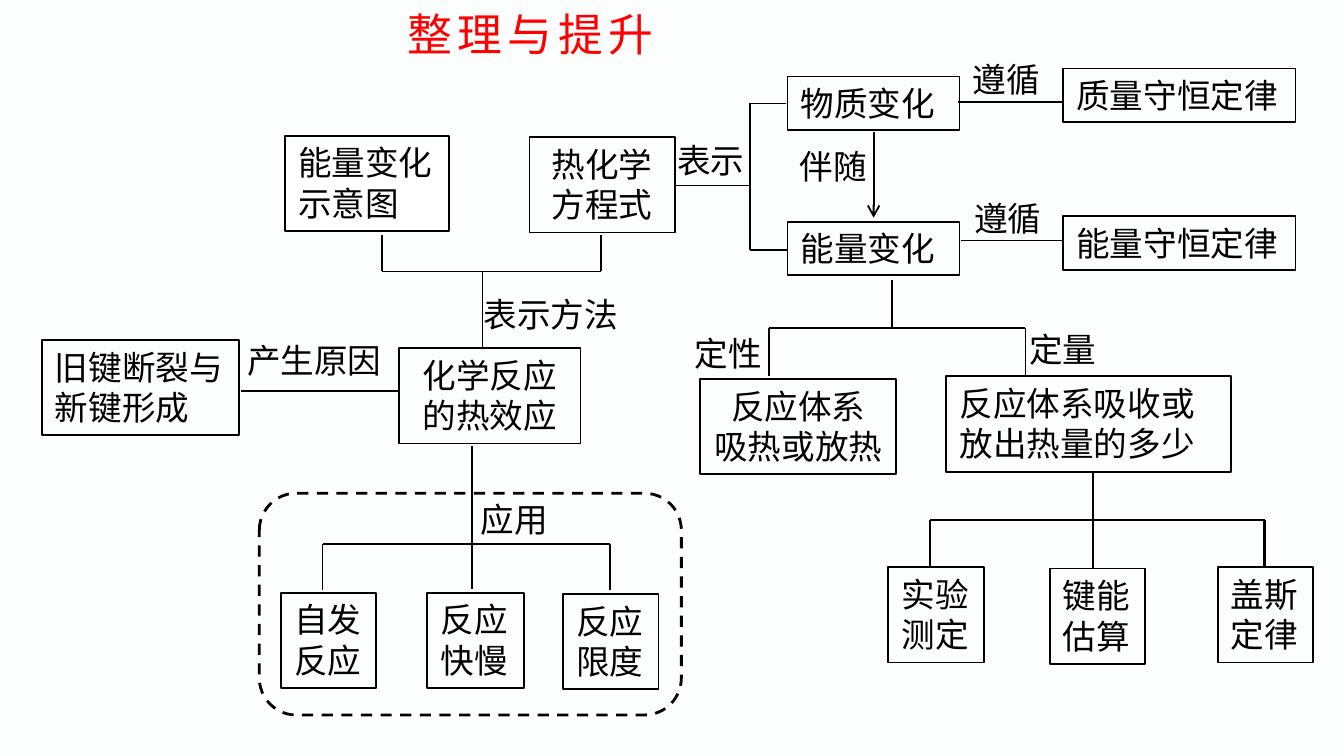
from dataclasses import dataclass
from itertools import pairwise

from lxml import etree
from pptx import Presentation
from pptx.dml.color import RGBColor
from pptx.enum.dml import MSO_LINE
from pptx.enum.shapes import MSO_CONNECTOR, MSO_SHAPE
from pptx.enum.text import MSO_ANCHOR, MSO_AUTO_SIZE, PP_ALIGN
from pptx.oxml.ns import qn
from pptx.util import Inches, Pt

RECTANGLE = MSO_SHAPE.RECTANGLE
ROUNDED = MSO_SHAPE.ROUNDED_RECTANGLE
STRAIGHT = MSO_CONNECTOR.STRAIGHT
DASH = MSO_LINE.DASH
TOP = MSO_ANCHOR.TOP
NO_AUTOFIT = MSO_AUTO_SIZE.NONE
LEFT, CENTER = PP_ALIGN.LEFT, PP_ALIGN.CENTER

COLORS = {"background": "FCFDFD", "ink": "000000", "title": "FF0000", "paper": "FFFFFF"}
FONT = "Noto Sans CJK SC"
SLIDE_WIDTH = 10
SLIDE_HEIGHT = SLIDE_WIDTH * 9 / 16
ONE_LINE, TWO_LINES = 0.4, 0.71


@dataclass
class Box:
    text: str
    left: float
    top: float
    width: float
    height: float = TWO_LINES
    align: int = LEFT
    fill: str | None = None


@dataclass
class Label:
    text: str
    left: float
    top: float
    width: float = 0.88


@dataclass
class Fork:
    stem: float
    stem_start: float
    stem_end: float
    bar: float
    first: float
    last: float
    branch_end: float
    last_width: float = 1


@dataclass
class Route:
    points: tuple[tuple[float, float], ...]
    width: float = 1
    arrow: bool = False


BOXES = [
    Box("化学反应\n的热效应", 2.97, 2.59, 1.35, align=CENTER),
    Box("热化学方程式", 3.94, 1.02, 1.08, align=CENTER),
    Box("能量变化示意图", 2.12, 1.01, 1.22, fill="paper"),
    Box("旧键断裂与\n新键形成", 0.31, 2.53, 1.47),
    Box("质量守恒定律", 7.91, 0.51, 1.73, ONE_LINE),
    Box("能量守恒定律", 7.91, 1.61, 1.73, ONE_LINE),
    Box("反应体系\n吸热或放热", 5.21, 2.82, 1.46, align=CENTER),
    Box("反应体系吸收或放出热量的多少", 7.04, 2.8, 2.12),
    Box("键能估算", 7.81, 4.23, 0.71),
    Box("实验测定", 6.61, 4.22, 0.71),
    Box("盖斯定律", 9.06, 4.22, 0.71),
    Box("自发反应", 2.09, 4.41, 0.71),
    Box("反应快慢", 3.18, 4.41, 0.72),
    Box("反应限度", 4.19, 4.42, 0.71),
    Box("物质变化", 5.86, 0.57, 1.28, ONE_LINE),
    Box("能量变化", 5.86, 1.65, 1.28, ONE_LINE),
]

LABELS = [
    Label("表示方法", 3.5, 2.14, 1.33),
    Label("产生原因", 1.74, 2.48, 1.32),
    Label("遵循", 7.14, 0.39),
    Label("遵循", 7.15, 1.42),
    Label("定性", 5.07, 2.43),
    Label("定量", 7.56, 2.4),
    Label("应用", 3.48, 3.66, 0.84),
    Label("表示", 4.94, 0.99),
    Label("伴随", 5.85, 1.04),
]

FORKS = [
    Fork(3.59, 2.59, 2.02, 2.02, 2.84, 4.47, 1.75),
    Fork(6.64, 2.08, 2.44, 2.44, 5.72, 7.63, 2.8),
    Fork(8.13, 3.51, 4.23, 3.87, 6.92, 9.41, 4.23, last_width=1.5),
    Fork(3.51, 3.32, 4.38, 4.05, 2.4, 4.54, 4.39),
]

ROUTES = [
    Route(((1.79, 2.91), (2.97, 2.91))),
    Route(((7.13, 0.76), (7.91, 0.76))),
    Route(((7.15, 1.79), (7.91, 1.79))),
    Route(((5.02, 1.38), (5.58, 1.38))),
    Route(((5.85, 0.77), (5.58, 0.77), (5.58, 1.86), (5.86, 1.86))),
    Route(((6.5, 0.98), (6.5, 1.62)), arrow=True),
]


def color(name: str) -> RGBColor:
    return RGBColor.from_string(COLORS[name])


def write(shape, text: str, size: float = 18, ink: str = "ink",
          align: int = LEFT, wrap: bool = True, spacing: int = 0) -> None:
    frame = shape.text_frame
    frame.text = text
    frame.word_wrap = wrap
    frame.auto_size = NO_AUTOFIT
    frame.vertical_anchor = TOP
    for paragraph in frame.paragraphs:
        paragraph.alignment = align
        paragraph.line_spacing = Pt(size * 1.2)
        font = paragraph.font
        font.size = Pt(size)
        font.name = FONT
        font.color.rgb = color(ink)
        properties = paragraph._p.pPr.find(qn("a:defRPr"))
        etree.SubElement(properties, qn("a:ea"), typeface=FONT)
        if spacing:
            properties.set("spc", str(spacing * 100))


def draw_outline(slide, kind, left: float, top: float, width: float, height: float,
                 line_width: float = 1, fill: str | None = None):
    shape = slide.shapes.add_shape(kind, Inches(left), Inches(top), Inches(width), Inches(height))
    shape.shadow.inherit = False
    if fill:
        shape.fill.solid()
        shape.fill.fore_color.rgb = color(fill)
    else:
        shape.fill.background()
    shape.line.color.rgb = color("ink")
    shape.line.width = Pt(line_width)
    return shape


def draw_box(slide, box: Box) -> None:
    shape = draw_outline(slide, RECTANGLE, box.left, box.top, box.width, box.height, fill=box.fill)
    write(shape, box.text, align=box.align)


def draw_label(slide, label: Label) -> None:
    shape = slide.shapes.add_textbox(Inches(label.left), Inches(label.top),
                                     Inches(label.width), Inches(ONE_LINE))
    write(shape, label.text)


def draw_route(slide, route: Route) -> None:
    for start, end in pairwise(route.points):
        connector = slide.shapes.add_connector(STRAIGHT, *map(Inches, start + end))
        connector.line.color.rgb = color("ink")
        connector.line.width = Pt(route.width)
        if route.arrow:
            etree.SubElement(connector.line._get_or_add_ln(), qn("a:tailEnd"), type="arrow")
        etree.SubElement(connector._element.spPr, qn("a:effectLst"))


def draw_fork(slide, fork: Fork) -> None:
    draw_route(slide, Route(((fork.stem, fork.stem_start), (fork.stem, fork.stem_end))))
    draw_route(slide, Route(((fork.first, fork.bar), (fork.last, fork.bar))))
    for branch, width in ((fork.first, 1), (fork.last, fork.last_width)):
        draw_route(slide, Route(((branch, fork.bar), (branch, fork.branch_end)), width))


def main() -> None:
    presentation = Presentation()
    presentation.slide_width = Inches(SLIDE_WIDTH)
    presentation.slide_height = Inches(SLIDE_HEIGHT)
    slide = presentation.slides.add_slide(presentation.slide_layouts[5])
    slide.background.fill.solid()
    slide.background.fill.fore_color.rgb = color("background")

    title = slide.shapes.title
    title.left, title.top, title.width, title.height = map(Inches, (2.93, 0, 2.1, 0.5))
    write(title, "整理与提升", size=24, ink="title", wrap=False, spacing=3)

    application_frame = draw_outline(slide, ROUNDED, 1.93, 3.67, 3.14, 1.65, line_width=1.5)
    application_frame.line.dash_style = DASH
    for items, draw in ((BOXES, draw_box), (FORKS, draw_fork),
                        (ROUTES, draw_route), (LABELS, draw_label)):
        for item in items:
            draw(slide, item)
    presentation.save("out.pptx")


if __name__ == "__main__":
    main()
